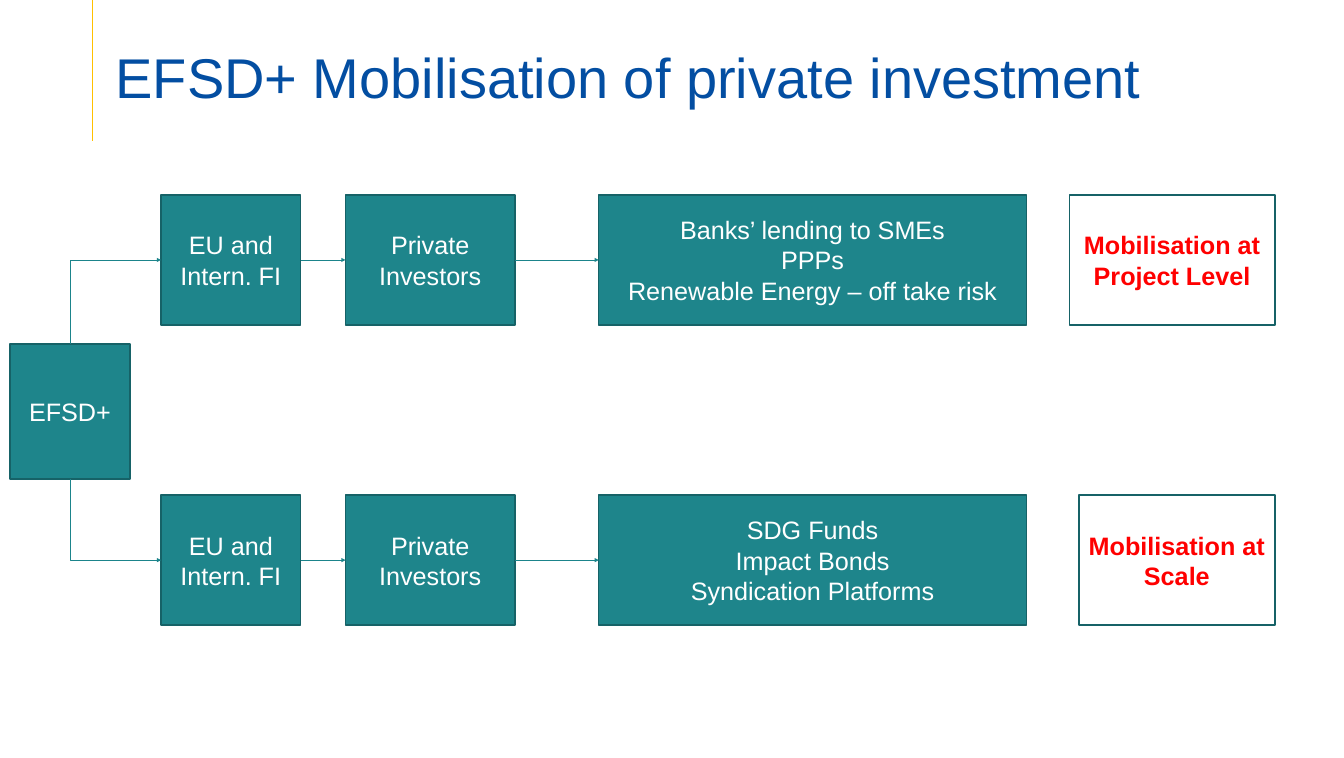
from pptx import Presentation
from pptx.dml.color import RGBColor
from pptx.enum.shapes import MSO_CONNECTOR as Kind, MSO_SHAPE as Form
from pptx.enum.text import MSO_ANCHOR as Anchor, PP_ALIGN as Align
from pptx.oxml.ns import qn
from pptx.util import Cm, Pt
from lxml.etree import SubElement


def color(text):
    return RGBColor.from_string(text)


def add_box(x, y, wide, high, lines, fill="1E858B", ink="FFFFFF", bold=False):
    box = shapes.add_shape(Form.RECTANGLE, Cm(x), Cm(y), Cm(wide), Cm(high))
    box.shadow.inherit = False
    box.fill.solid()
    box.fill.fore_color.rgb = color(fill)
    box.line.color.rgb = color("166267")
    box.line.width = Pt(2)
    frame = box.text_frame
    frame.word_wrap = True
    frame.vertical_anchor = Anchor.MIDDLE
    frame.text = "\n".join(lines)
    for para in frame.paragraphs:
        para.alignment = Align.CENTER
        para.font.name = "Arial"
        para.font.size = Pt(35.9)
        para.font.bold = bold
        para.font.color.rgb = color(ink)
    return box


deck = Presentation()
deck.slide_width, deck.slide_height = Cm(67.56), Cm(38.1)
slide = deck.slides.add_slide(deck.slide_layouts[6])
shapes = slide.shapes

# Title with its yellow rule
rule = shapes.add_connector(Kind.STRAIGHT, Cm(4.65), 0, Cm(4.65), Cm(7.09))
rule.line.color.rgb = color("FFC000")
rule.line.width = Pt(2.25)
SubElement(rule._element.spPr, qn("a:effectLst"))

title = shapes.add_textbox(Cm(5.56), Cm(1.68), Cm(64.41 - 3), Cm(3.94))
frame = title.text_frame
frame.word_wrap = True
frame.vertical_anchor = Anchor.BOTTOM
para = frame.paragraphs[0]
para.text = "EFSD+ Mobilisation of private investment"
para.font.name = "Arial"
para.font.size = Pt(79.8)
para.font.color.rgb = color("034EA2")

# Boxes: one source, two rows
source = add_box(0.51, 17.3, 6.02, 6.78, ["EFSD+"])
high, right = 6.53, 64.09
rows = [
    (9.8, 0, 10.34, "Mobilisation at Project Level",
     ["Banks’ lending to SMEs", "PPPs", "Renewable Energy – off take risk"]),
    (24.89, 2, 9.86, "Mobilisation at Scale",
     ["SDG Funds", "Impact Bonds", "Syndication Platforms"]),
]
links = []
for top, side, wide, level, tools in rows:
    bank = add_box(8.1, top, 7.01, high, ["EU and Intern. FI"])
    fund = add_box(17.37, top, 8.51, high, ["Private Investors"])
    goal = add_box(30.1, top, 21.49, high, tools)
    add_box(right - wide, top, wide, high, [level], "FFFFFF", "FF0000", True)
    # The bent link is drawn from the bank back to the source: its arrow is at the head
    links += [
        (Kind.ELBOW, bank, 1, source, side, "a:headEnd"),
        (Kind.STRAIGHT, bank, 3, fund, 1, "a:tailEnd"),
        (Kind.STRAIGHT, fund, 3, goal, 1, "a:tailEnd"),
    ]

# Arrows between the boxes
for kind, start, out, end, into, tip in links:
    link = shapes.add_connector(kind, 0, 0, 0, 0)
    link.begin_connect(start, out)
    link.end_connect(end, into)
    link.line.color.rgb = color("1B848B")
    link.line.width = Pt(0.75)
    props = link._element.spPr
    if kind == Kind.ELBOW:
        props.find(qn("a:prstGeom")).set("prst", "bentConnector2")
    SubElement(link.line._get_or_add_ln(), qn(tip)).set("type", "triangle")
    SubElement(props, qn("a:effectLst"))

deck.save("out.pptx")
